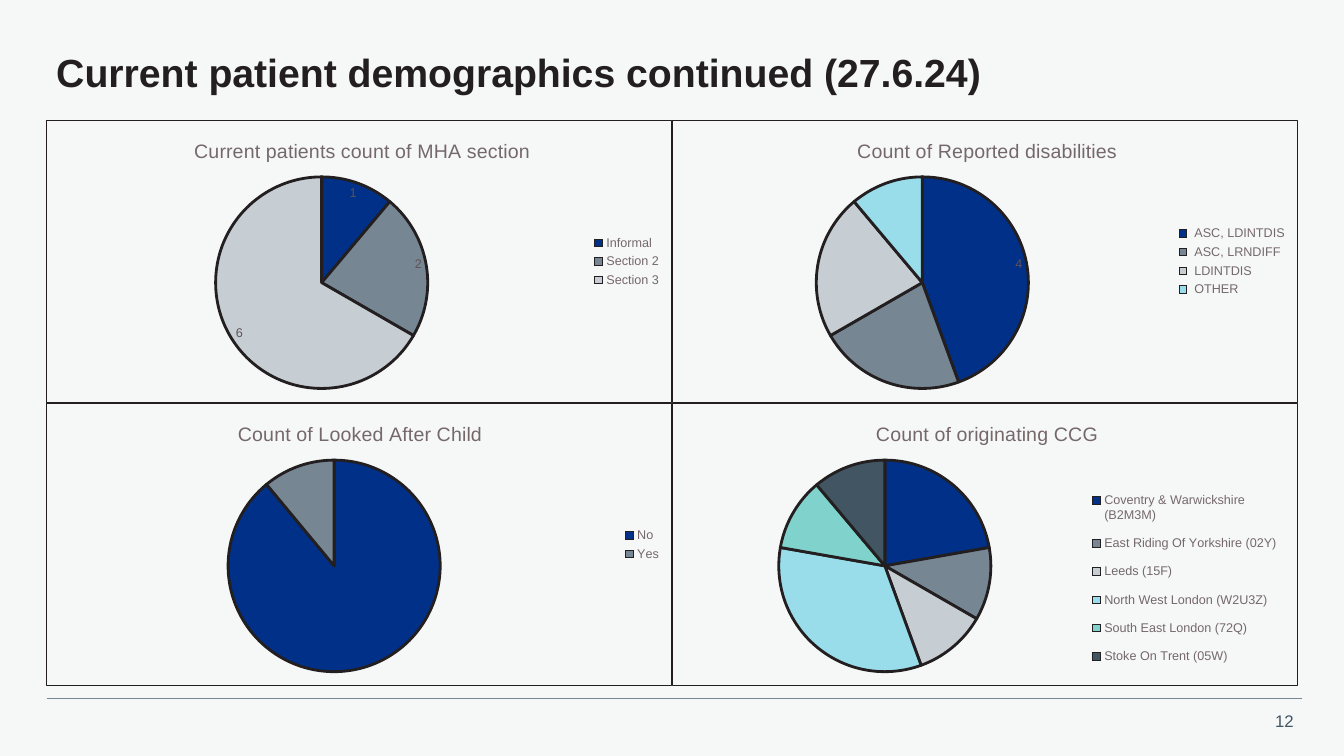
from dataclasses import dataclass

from lxml import etree
from pptx import Presentation
from pptx import util as u
from pptx.chart import data as cd
from pptx.dml.color import RGBColor
from pptx.enum import chart as ec
from pptx.enum import shapes, text
from pptx.oxml import parse_xml
from pptx.oxml.ns import nsdecls, qn


@dataclass(frozen=True)
class Theme:
    font: str = "Arial"
    back: str = "F6F8F8"
    ink: str = "231F20"
    grey: str = "75686B"
    label: str = "5E5356"
    rule: str = "768692"
    page: str = "425563"
    pie: tuple = ("003087", "768692", "C7CED3", "99DDEB", "80D2CC", "425563")
    head: int = 28
    title: int = 14
    base: int = 10
    key: int = 9
    foot: int = 12


T = Theme()
WIDE, HIGH = 13.33, 7.5
PIES = [
    dict(title="Current patients count of MHA section", tx=0.23, mid=0.44, label="all",
         data={"Informal": 1, "Section 2": 2, "Section 3": 6}),
    dict(title="Count of Reported disabilities", tx=0.29, mid=0.4, label="first",
         data={" ASC, LDINTDIS": 4, " ASC, LRNDIFF": 2, " LDINTDIS": 2, " OTHER": 1}),
    dict(title="Count of Looked After Child", tx=0.3, mid=0.46,
         data={"No": 89, "Yes": 11}),
    dict(title="Count of originating CCG", tx=0.32, mid=0.34, key=(0.66, 0.27, 0.32, 0.7),
         data={"Coventry & Warwickshire (B2M3M)": 22, "East Riding Of Yorkshire (02Y)": 11,
               "Leeds (15F)": 11, "North West London (W2U3Z)": 33,
               "South East London (72Q)": 11, "Stoke On Trent (05W)": 11}),
]


def style(font, size, color, bold=False):
    font.name, font.size, font.bold = T.font, u.Pt(size), bold
    font.color.rgb = RGBColor.from_string(color)


def place(node, x, y, w=None, h=None, inner=False):
    for old in node.findall(qn("c:layout")):
        node.remove(old)
    parts = [("layoutTarget", "inner")] if inner else []
    parts += [("xMode", "edge"), ("yMode", "edge"), ("x", x), ("y", y)]
    if w:
        parts += [("w", w), ("h", h)]
    body = "".join(f'<c:{tag} val="{val}"/>' for tag, val in parts)
    layout = parse_xml(f'<c:layout {nsdecls("c")}><c:manualLayout>{body}'
                       '</c:manualLayout></c:layout>')
    before = node.find(qn("c:tx"))
    if before is None:
        before = node.find(qn("c:legendPos"))
    if before is None:
        node.insert(0, layout)
    else:
        before.addnext(layout)


def frame(chart):
    chart.element.find(qn("c:chart")).addnext(parse_xml(
        f'<c:spPr {nsdecls("c", "a")}><a:noFill/><a:ln w="9525"><a:solidFill>'
        f'<a:srgbClr val="{T.ink}"/></a:solidFill></a:ln></c:spPr>'))


def labels(plot, mode):
    if mode == "all":
        plot.has_data_labels = True
        marks = plot.data_labels
        marks.show_value = True
        marks.position = ec.XL_LABEL_POSITION.BEST_FIT
        style(marks.font, T.key, T.label)
    elif mode == "first":
        mark = plot.series[0].points[0].data_label
        style(mark.font, T.key, T.label)
        mark.position = ec.XL_LABEL_POSITION.BEST_FIT


def pie(slide, box, item):
    values = cd.CategoryChartData()
    values.categories = list(item["data"])
    values.add_series("Series 1", list(item["data"].values()))
    chart = slide.shapes.add_chart(
        ec.XL_CHART_TYPE.PIE, *map(u.Inches, box), values).chart
    style(chart.font, T.base, T.ink)
    chart.has_title = True
    para = chart.chart_title.text_frame.paragraphs[0]
    para.text = item["title"]
    style(para.font, T.title, T.grey)
    place(chart.chart_title._element, item["tx"], 0.05)
    chart.has_legend = True
    key = chart.legend
    key.position = ec.XL_LEGEND_POSITION.RIGHT
    key.include_in_layout = False
    style(key.font, T.key, T.grey)
    if "key" in item:
        place(key._element, *item["key"])
    plot = chart.plots[0]
    plot.vary_by_categories = True
    for spot, color in zip(range(len(item["data"])), T.pie):
        part = plot.series[0].points[spot].format
        part.fill.solid()
        part.fill.fore_color.rgb = RGBColor.from_string(color)
        part.line.color.rgb = RGBColor.from_string(T.ink)
        part.line.width = u.Pt(2)
    labels(plot, item.get("label"))
    area = chart.element.find(qn("c:chart")).find(qn("c:plotArea"))
    place(area, round(item["mid"] - 0.17, 2), 0.2, 0.34, 0.75, True)
    frame(chart)


def grid(slide, box, items, cols=2):
    x, y, w, h = box
    wide, high = w / cols, h / (len(items) // cols)
    for spot, item in enumerate(items):
        row, col = divmod(spot, cols)
        pie(slide, (x + col * wide, y + row * high, wide, high), item)


def words(slide, box, line, size, color, bold=False, align=text.PP_ALIGN.LEFT):
    body = slide.shapes.add_textbox(*map(u.Inches, box)).text_frame
    body.word_wrap = True
    para = body.paragraphs[0]
    para.text, para.alignment = line, align
    style(para.font, size, color, bold)


def footer(slide, box, page):
    x, y, w, h = box
    rule = slide.shapes.add_connector(
        shapes.MSO_CONNECTOR.STRAIGHT, *map(u.Inches, (x, y, x + w, y)))
    rule.line.color.rgb = RGBColor.from_string(T.rule)
    rule.line.width = u.Pt(0.5)
    etree.SubElement(rule._element.spPr, qn("a:effectLst"))
    words(slide, (x + w - 0.5, y + 0.07, 0.52, h - 0.07), page, T.foot, T.page,
          align=text.PP_ALIGN.RIGHT)


def main():
    deck = Presentation()
    deck.slide_width, deck.slide_height = u.Inches(WIDE), u.Inches(HIGH)
    slide = deck.slides.add_slide(deck.slide_layouts[6])
    fill = slide.background.fill
    fill.solid()
    fill.fore_color.rgb = RGBColor.from_string(T.back)
    footer(slide, (0.47, 6.93, 12.44, 0.37), "12")
    grid(slide, (0.46, 1.19, 12.41, 5.62), PIES)
    words(slide, (0.46, 0.43, 9.8, 0.57), "Current patient demographics continued (27.6.24)",
          T.head, T.ink, True)
    deck.save("out.pptx")


if __name__ == "__main__":
    main()
